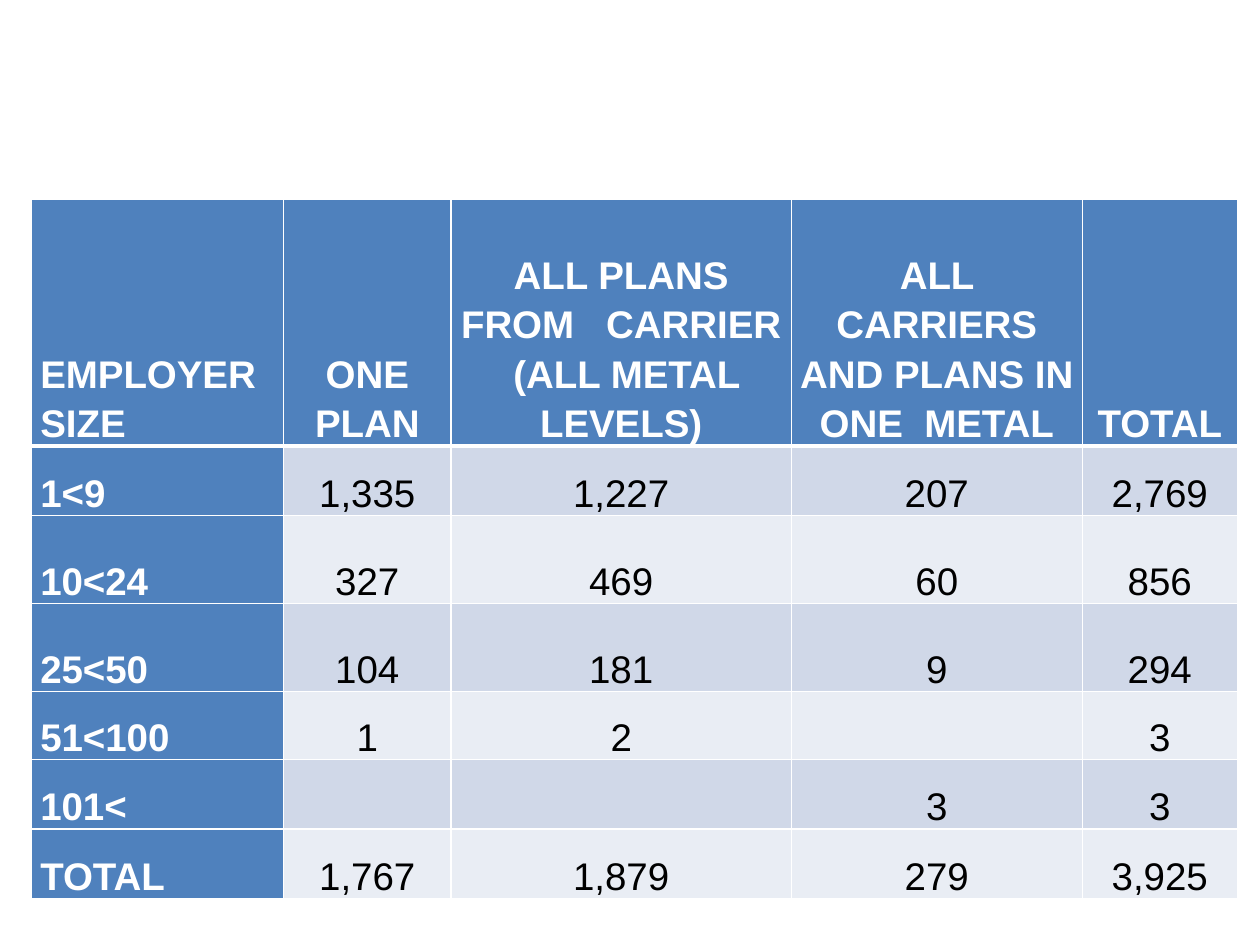
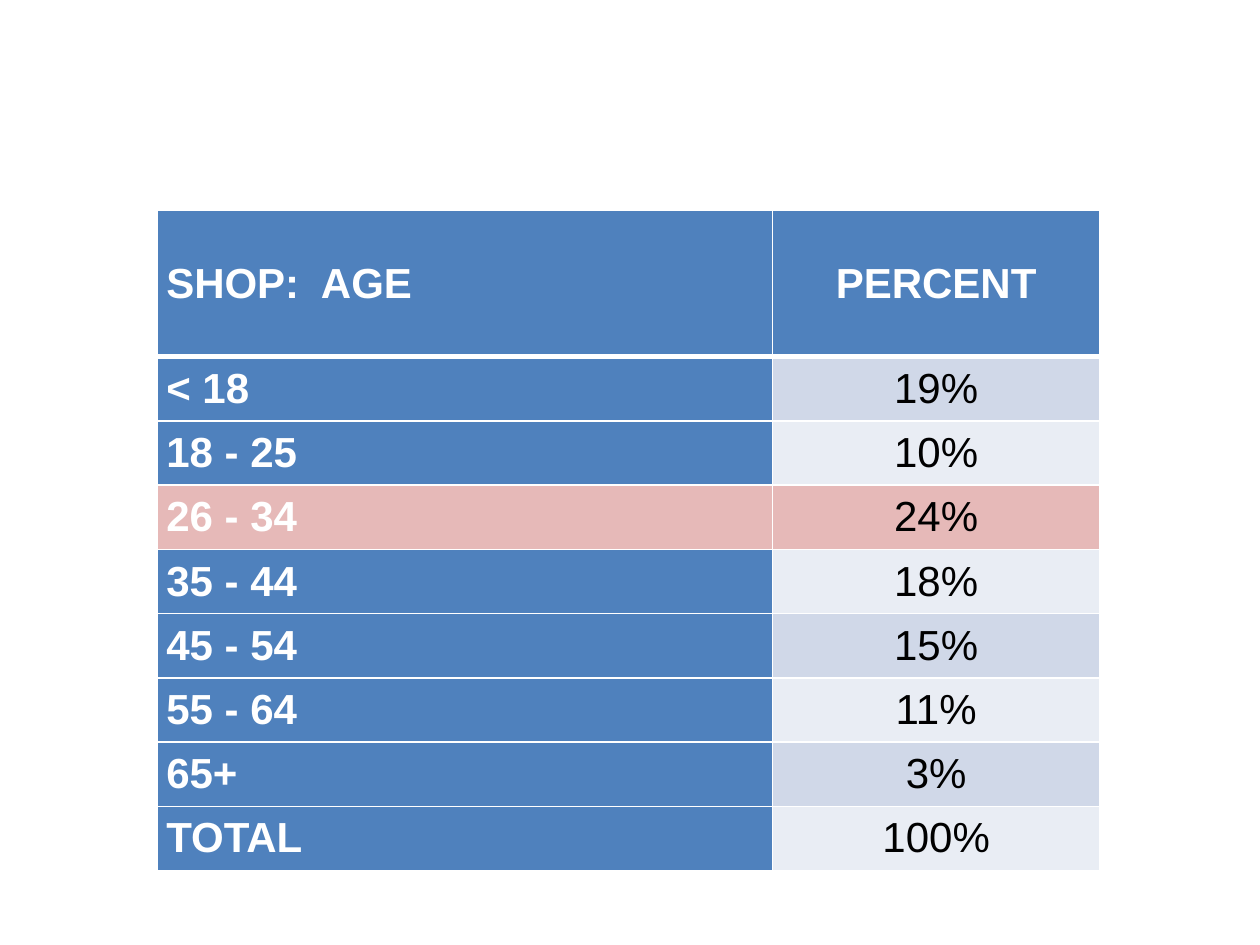
from lxml import etree
from pptx import Presentation
from pptx.dml.color import RGBColor
from pptx.enum import text
from pptx.oxml import ns
from pptx.util import Inches, Pt

COLOURS = {
    "heading": "4F81BD",
    "odd": "D0D8E8",
    "even": "E9EDF4",
    "highlight": "E6B9B8",
    "white": "FFFFFF",
    "black": "000000",
}
FONT = "Arial"
BLANK_LAYOUT = 6

PLAN_CHOICES = [
    ["EMPLOYER SIZE", "ONE PLAN",
     "ALL PLANS FROM   CARRIER \n (ALL METAL LEVELS)",
     "ALL CARRIERS AND PLANS IN ONE  METAL", "TOTAL"],
    ["1<9", "1,335", "1,227", "207", "2,769"],
    ["10<24", "327", "469", "60", "856"],
    ["25<50", "104", "181", "9", "294"],
    ["51<100", "1", "2", "", "3"],
    ["101<", "", "", "3", "3"],
    ["TOTAL", "1,767", "1,879", "279", "3,925"],
]
AGE_SHARES = [
    ["SHOP:  AGE", "PERCENT"],
    ["< 18", "19%"],
    ["18 - 25", "10%"],
    ["26 - 34", "24%"],
    ["35 - 44", "18%"],
    ["45 - 54", "15%"],
    ["55 - 64", "11%"],
    ["65+", "3%"],
    ["TOTAL", "100%"],
]


def colour(name):
    return RGBColor.from_string(COLOURS[name])


def add_borders(cell, row):
    """White grid lines, with a heavier rule under the header row."""
    widths = {"lnL": 1, "lnR": 1, "lnT": 3 if row == 1 else 1, "lnB": 3 if row == 0 else 1}
    properties = cell._tc.get_or_add_tcPr()
    for side, width in widths.items():
        line = etree.SubElement(properties, ns.qn(f"a:{side}"), w=str(Pt(width)))
        fill = etree.SubElement(line, ns.qn("a:solidFill"))
        etree.SubElement(fill, ns.qn("a:srgbClr"), val=COLOURS["white"])


def fill_name(row, column, highlight_row):
    if row == highlight_row:
        return "highlight"
    if row == 0 or column == 0:
        return "heading"
    return "odd" if row % 2 else "even"


def write_cell(cell, words, size, is_heading, centred, line_spacing):
    for index, line in enumerate(words.split("\n")):
        frame = cell.text_frame
        paragraph = frame.add_paragraph() if index else frame.paragraphs[0]
        paragraph.alignment = text.PP_ALIGN.CENTER if centred else text.PP_ALIGN.LEFT
        paragraph.line_spacing = line_spacing
        run = paragraph.add_run()
        run.text = line
        run.font.name = FONT
        run.font.size = Pt(size)
        run.font.bold = is_heading
        run.font.color.rgb = colour("white" if is_heading else "black")


def add_data_table(slide, rows, left, top, widths, heights, size, anchor,
                   line_spacing=1.0, highlight_row=None):
    table = slide.shapes.add_table(
        len(rows), len(widths), Inches(left), Inches(top),
        Inches(sum(widths)), Inches(sum(heights))).table
    for column, width in zip(table.columns, widths):
        column.width = Inches(width)
    for table_row, height in zip(table.rows, heights):
        table_row.height = Inches(height)

    for r, row in enumerate(rows):
        for c, words in enumerate(row):
            cell = table.cell(r, c)
            cell.margin_left = cell.margin_right = Inches(0.07)
            cell.margin_top = cell.margin_bottom = 0
            cell.vertical_anchor = anchor
            add_borders(cell, r)
            cell.fill.solid()
            cell.fill.fore_color.rgb = colour(fill_name(r, c, highlight_row))
            if words:
                write_cell(cell, words, size, r == 0 or c == 0, c > 0, line_spacing)


def main():
    deck = Presentation()
    deck.slide_width, deck.slide_height = Inches(10), Inches(7.5)
    blank = deck.slide_layouts[BLANK_LAYOUT]

    # Plan choice by employer size
    add_data_table(
        deck.slides.add_slide(blank), PLAN_CHOICES, 0.25, 1.58,
        widths=[2, 1.33, 2.7, 2.31, 1.23],
        heights=[1.96, 0.55, 0.7, 0.7, 0.54, 0.55, 0.55],
        size=22, anchor=text.MSO_ANCHOR.BOTTOM, line_spacing=1.15)

    # Enrolment by age, largest group highlighted
    add_data_table(
        deck.slides.add_slide(blank), AGE_SHARES, 1.25, 1.67,
        widths=[4.88, 2.6], heights=[1.16] + [0.51] * 8,
        size=24, anchor=text.MSO_ANCHOR.MIDDLE, highlight_row=3)

    deck.save("out.pptx")


if __name__ == "__main__":
    main()
